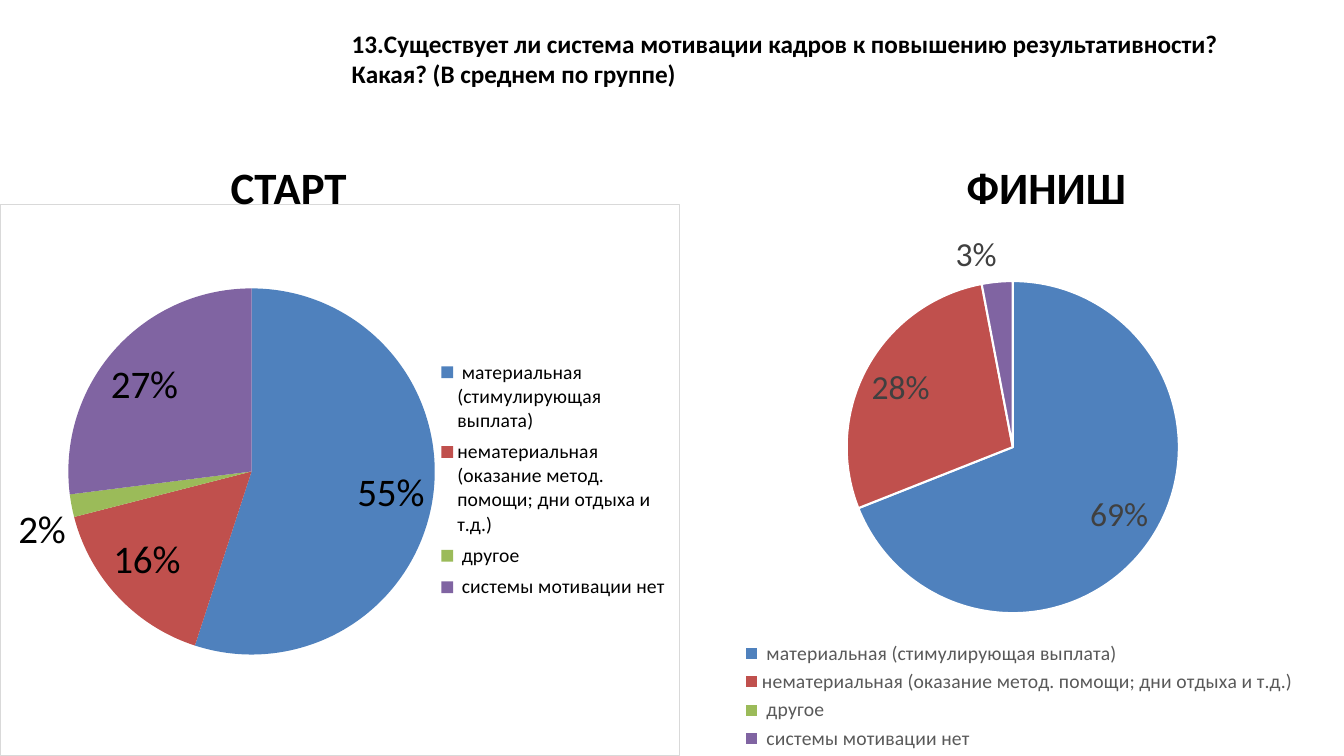
from lxml.etree import SubElement
from pptx import Presentation
from pptx.chart.data import CategoryChartData
from pptx.dml.color import RGBColor
from pptx.enum.chart import XL_CHART_TYPE, XL_LABEL_POSITION, XL_LEGEND_POSITION
from pptx.oxml import parse_xml
from pptx.oxml.ns import nsdecls, qn
from pptx.util import Inches, Pt

COLORS = {
    "black": "000000",
    "white": "FFFFFF",
    "border": "D9D9D9",
    "legend": "595959",
    "label": "404040",
}
SLICE_COLORS = {
    " материальная (стимулирующая выплата)": "4F81BD",
    "нематериальная (оказание метод. помощи; дни отдыха и т.д.)": "C0504D",
    " другое": "9BBB59",
    " системы мотивации нет": "8064A2",
}


class SurveySlide:
    font_name = "Calibri"

    def __init__(self, presentation):
        self.slide = presentation.slides.add_slide(presentation.slide_layouts[6])

    def style_font(self, font, size, color, bold=False):
        font.name = self.font_name
        font.size = Pt(size)
        font.bold = bold
        font.color.rgb = RGBColor.from_string(COLORS[color])

    def add_text(self, text, box, size):
        shape = self.slide.shapes.add_textbox(*map(Inches, box))
        text_frame = shape.text_frame
        text_frame.word_wrap = True
        text_frame.text = text
        self.style_font(text_frame.paragraphs[0].runs[0].font, size, "black", bold=True)

    def place(self, element, index, area):
        for layout in element.findall(qn("c:layout")):
            element.remove(layout)
        layout = parse_xml(f"<c:layout {nsdecls('c')}/>")
        manual = SubElement(layout, qn("c:manualLayout"))
        if index == 0:
            SubElement(manual, qn("c:layoutTarget"), val="inner")
        for axis in "xy":
            SubElement(manual, qn(f"c:{axis}Mode"), val="edge")
        for name, value in zip("xywh", area):
            SubElement(manual, qn(f"c:{name}"), val=str(value))
        element.insert(index, layout)

    def set_frame(self, chart, color):
        line = "<a:noFill/>"
        if color:
            line = f'<a:solidFill><a:srgbClr val="{COLORS[color]}"/></a:solidFill>'
        chart_space = chart.element
        chart_space.find(qn("c:chart")).addnext(parse_xml(
            f"<c:spPr {nsdecls('c', 'a')}><a:noFill/>"
            f'<a:ln w="{Pt(0.75)}">{line}</a:ln></c:spPr>'
        ))

    def add_pie(self, values, box, pie_area, legend_area, legend_position,
                legend_color, label_size, label_color, slice_line=None, frame=None):
        data = CategoryChartData()
        data.categories = list(SLICE_COLORS)
        data.add_series("Series 1", values)
        chart = self.slide.shapes.add_chart(
            XL_CHART_TYPE.PIE, *map(Inches, box), data
        ).chart
        chart.has_title = False
        chart.font.name = "Arial"
        chart.font.size = Pt(10)
        self.set_frame(chart, frame)

        chart.has_legend = True
        legend = chart.legend
        legend.position = legend_position
        legend.include_in_layout = False
        self.style_font(legend.font, 14, legend_color)
        self.place(chart.element.find(".//" + qn("c:legend")), 1, legend_area)
        self.place(chart.element.find(".//" + qn("c:plotArea")), 0, pie_area)

        plot = chart.plots[0]
        plot.vary_by_categories = True
        series = plot.series[0]
        for index, color in enumerate(SLICE_COLORS.values()):
            slice_format = series.points[index].format
            slice_format.fill.solid()
            slice_format.fill.fore_color.rgb = RGBColor.from_string(color)
            if slice_line:
                slice_format.line.width = Pt(1.5)
                slice_format.line.color.rgb = RGBColor.from_string(COLORS[slice_line])
            else:
                slice_format.line.fill.background()

        labels = series.data_labels
        labels.show_value = False
        labels.show_percentage = True
        labels.number_format = "0%"
        labels.number_format_is_linked = False
        labels.position = XL_LABEL_POSITION.BEST_FIT
        self.style_font(labels.font, label_size, label_color)
        labels_element = series._element.find(qn("c:dLbls"))
        empty_slices = [index for index, value in enumerate(values) if value == 0]
        for order, index in enumerate(empty_slices):
            labels_element.insert(order, parse_xml(
                f'<c:dLbl {nsdecls("c")}><c:idx val="{index}"/><c:delete val="1"/></c:dLbl>'
            ))


def main():
    presentation = Presentation()
    presentation.slide_width = Inches(13.33)
    presentation.slide_height = Inches(7.5)
    survey = SurveySlide(presentation)
    survey.add_text(
        "13.Существует ли система мотивации кадров к повышению результативности? "
        "Какая? (В среднем по группе)",
        (3.39, 0.23, 8.98, 1), 18,
    )
    survey.add_pie(
        (55, 16, 2, 27), (0, 2.02, 6.74, 5.48),
        pie_area=(0.1, 0.15, 0.54, 0.67), legend_area=(0.66, 0.27, 0.33, 0.46),
        legend_position=XL_LEGEND_POSITION.RIGHT, legend_color="black",
        label_size=28, label_color="black", frame="border",
    )
    survey.add_text("СТАРТ", (2.19, 1.54, 1.8, 0.63), 32)
    survey.add_text("ФИНИШ", (9.49, 1.54, 2.3, 0.63), 32)
    survey.add_pie(
        (69, 28, 0, 3), (6.75, 2.18, 6.59, 5.31),
        pie_area=(0.25, 0.11, 0.5, 0.63), legend_area=(0.08, 0.78, 0.86, 0.22),
        legend_position=XL_LEGEND_POSITION.BOTTOM, legend_color="legend",
        label_size=24, label_color="label", slice_line="white",
    )
    presentation.save("out.pptx")


if __name__ == "__main__":
    main()
